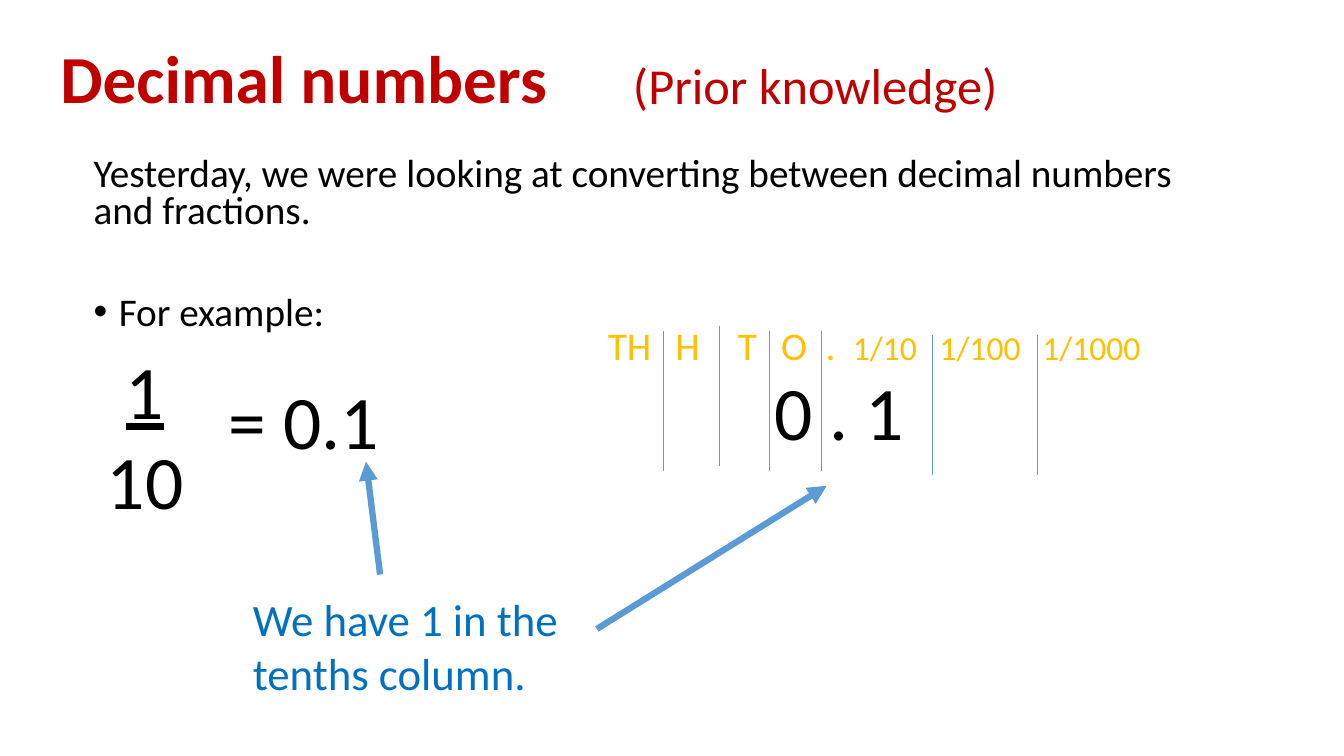
from lxml import etree
from pptx import Presentation
from pptx.dml.color import RGBColor
from pptx.enum.shapes import MSO_CONNECTOR
from pptx.enum.text import MSO_AUTO_SIZE, PP_ALIGN
from pptx.oxml.ns import qn
from pptx.util import Inches, Pt

STRAIGHT = MSO_CONNECTOR.STRAIGHT
CENTER = PP_ALIGN.CENTER
GROW = MSO_AUTO_SIZE.SHAPE_TO_FIT_TEXT
NO_FIT = MSO_AUTO_SIZE.NONE
FONT = "Calibri"
COLORS = {
    "red": "C00000",
    "black": "000000",
    "blue": "0070C0",
    "gold": "FFC000",
    "line": "5B9BD5",
}

prs = Presentation()
prs.slide_width, prs.slide_height = Inches(13.33), Inches(7.5)
slide = prs.slides.add_slide(prs.slide_layouts[6])


def add_text(box, paragraphs, color, fit=GROW):
    """Add a text box; each paragraph is a list of (text, size) runs."""
    frame = slide.shapes.add_textbox(*map(Inches, box)).text_frame
    frame.word_wrap = True
    frame.auto_size = fit
    for i, runs in enumerate(paragraphs):
        paragraph = frame.add_paragraph() if i else frame.paragraphs[0]
        for text, size in runs:
            run = paragraph.add_run()
            run.text = text
            run.font.name = FONT
            run.font.size = Pt(size)
            run.font.color.rgb = RGBColor.from_string(COLORS[color])
    return frame.paragraphs


def add_line(start, end, width):
    line = slide.shapes.add_connector(
        STRAIGHT, *map(Inches, (*start, *end)))
    line.line.color.rgb = RGBColor.from_string(COLORS["line"])
    line.line.width = Pt(width)
    etree.SubElement(line._element.spPr, qn("a:effectLst"))
    return line


# Heading
title = add_text((0.5, 0.31, 5.12, 0.91), [[("Decimal numbers", 48)]], "red")
title[0].runs[0].font.bold = True
add_text((6.18, 0.49, 4.2, 0.71), [[("(Prior knowledge)", 36)]], "red")

# Introduction, with a bulleted lead-in to the example
intro = add_text((0.83, 1.51, 11.5, 1.93), [
    [("Yesterday, we were looking at converting between decimal numbers "
      "and fractions.", 28)],
    [("For example:", 28)],
], "black", NO_FIT)
for paragraph, space in zip(intro, (10, 46)):
    paragraph.line_spacing = 0.8
    paragraph.space_before = Pt(space)
bullet_props = intro[1]._p.get_or_add_pPr()
bullet_props.set("marL", str(Inches(0.25)))
bullet_props.set("indent", str(-Inches(0.25)))
etree.SubElement(bullet_props, qn("a:buFont"), typeface="Arial")
etree.SubElement(bullet_props, qn("a:buChar"), char="•")

# One tenth as a fraction and as a decimal
fraction = add_text((0.79, 3.36, 1.3, 1.92),
                    [[("1", 54)], [("10", 54)]], "black")
for paragraph in fraction:
    paragraph.alignment = CENTER
fraction[0].runs[0].font.underline = True
add_text((2.17, 3.66, 1.96, 1.01), [[("= 0.1", 54)]], "black")

# Place value headings, spaced by tab stops
headings = add_text((5.93, 3.14, 6.03, 0.57), [[
    ("TH\tH\tT\tO\t.\t", 28),
    ("1/10\t1/100\t1/1000", 24),
]], "gold")
tab_list = etree.SubElement(headings[0]._p.get_or_add_pPr(), qn("a:tabLst"))
for stop in (0.67, 1.29, 1.72, 2.16, 2.43, 3.29, 4.31):
    etree.SubElement(tab_list, qn("a:tab"), pos=str(Inches(stop)), algn="l")

# Column dividers
for x, top in ((6.58, 3.28), (7.13, 3.23), (7.63, 3.28),
               (8.15, 3.28), (9.25, 3.32), (10.29, 3.32)):
    add_line((x, top), (x, top + 1.39), 0.5)
add_text((7.58, 3.57, 1.96, 1.01), [[("0 . 1", 54)]], "black")

# Explanation, with arrows to both decimals
add_text((2.41, 5.82, 3.44, 1.18),
         [[("We have 1 in the tenths column.", 32)]], "blue")
for start, end in (((3.77, 5.7), (3.63, 4.58)), ((5.92, 6.24), (8.2, 4.82))):
    arrow = add_line(start, end, 4.5)
    etree.SubElement(arrow.line._get_or_add_ln(), qn("a:tailEnd"),
                     type="triangle")

prs.save("out.pptx")
